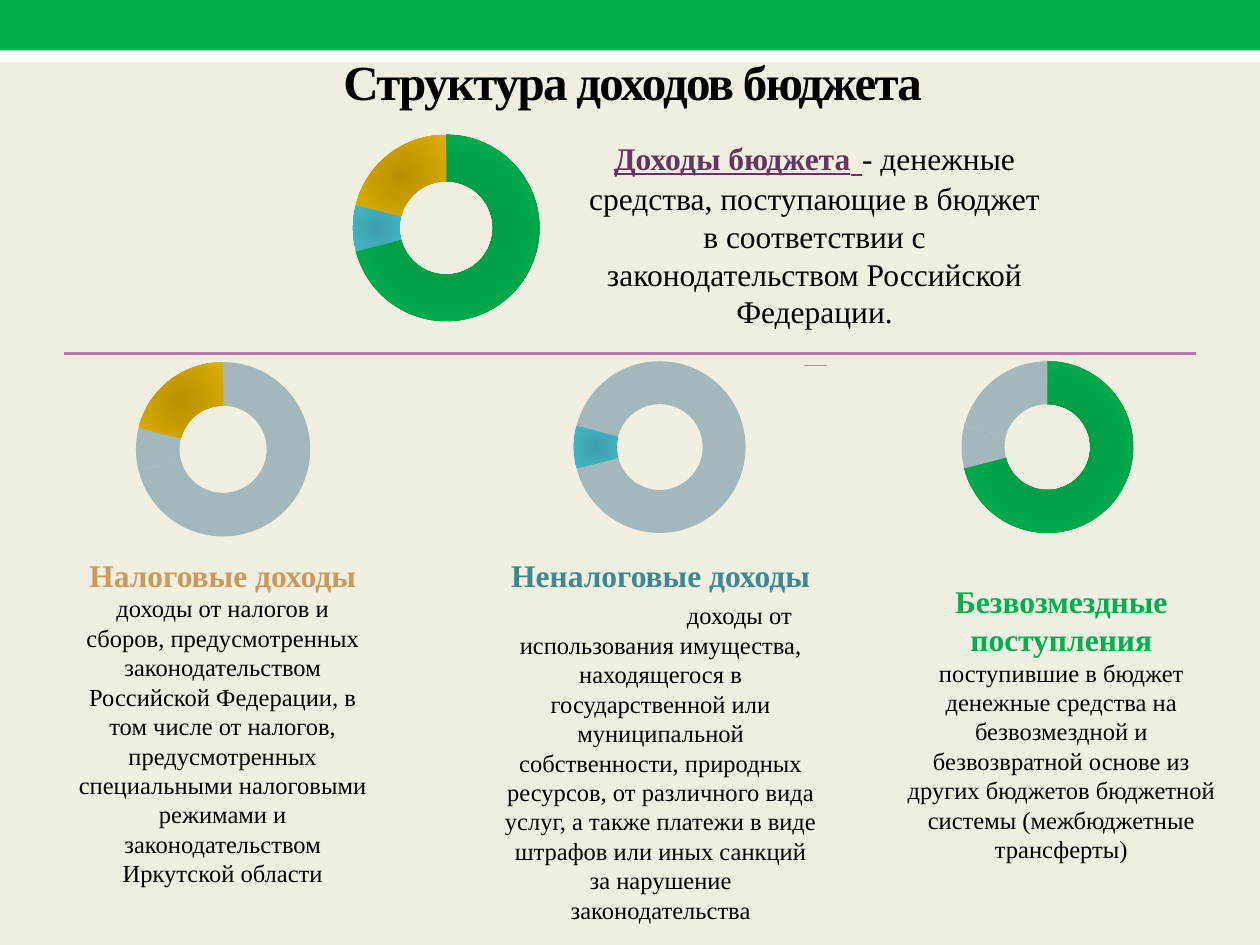
from dataclasses import dataclass
from typing import Optional

import pptx
import pptx.chart.data
import pptx.dml.color
import pptx.enum.chart
import pptx.enum.shapes
import pptx.enum.text
import pptx.oxml
import pptx.oxml.ns
import pptx.util
from pptx.util import Pt


@dataclass(frozen=True)
class Theme:
    background: str = "EFEEE1"
    white: str = "FFFFFF"
    black: str = "000000"
    green: str = "00B050"
    muted: str = "A4B7BB"
    plum: str = "633661"
    divider: str = "B77BB4"
    tax_heading: str = "C99A5B"
    other_heading: str = "3D8991"
    dash: str = "A89C8A"
    # centre and rim of each highlighted ring segment
    segments: tuple = (("009443", "00B050"), ("3D9DA9", "43B8C8"), ("B89000", "DEAE00"))
    serif: str = "Times New Roman"
    sans: str = "Arial"
    title: float = 28
    heading: float = 18
    body: float = 14
    label: float = 10


@dataclass(frozen=True)
class Area:
    left: float
    top: float
    width: float
    height: float

    def lengths(self) -> tuple:
        return Pt(self.left), Pt(self.top), Pt(self.width), Pt(self.height)


@dataclass(frozen=True)
class Span:
    text: str
    size: float
    color: str
    bold: bool = False
    underline: bool = False
    font: str = "Times New Roman"


@dataclass(frozen=True)
class Income:
    heading: str
    description: str
    color: str
    segment: int
    ring: Area
    text: Area
    first_indent: float = 0
    gap: float = 0


THEME = Theme()
SHARES = (71, 8, 21)
INCOMES = (
    Income("Налоговые доходы",
           "доходы от налогов и сборов, предусмотренных законодательством Российской "
           "Федерации, в том числе от налогов, предусмотренных специальными налоговыми "
           "режимами и законодательством Иркутской области",
           THEME.tax_heading, 2, Area(15, 197, 225, 119.5), Area(36.5, 314, 181.5, 199)),
    Income("Неналоговые доходы",
           "доходы\u00a0от использования имущества, находящегося в государственной или "
           "муниципальной собственности, природных ресурсов, от различного вида услуг, "
           "а также платежи в виде штрафов или иных санкций за нарушение законодательства",
           THEME.other_heading, 1, Area(266.5, 196.5, 221, 118), Area(281, 314, 193, 199),
           first_indent=90, gap=4),
    Income("Безвозмездные поступления",
           "поступившие в бюджет денежные средства на безвозмездной и безвозвратной "
           "основе из других бюджетов бюджетной системы (межбюджетные трансферты)",
           THEME.green, 0, Area(493, 196.5, 211, 118), Area(508.5, 329, 196, 170)),
)


def rgb(color: str) -> pptx.dml.color.RGBColor:
    return pptx.dml.color.RGBColor.from_string(color)


def add_band(page, area: Area, color: str) -> None:
    band = page.shapes.add_shape(pptx.enum.shapes.MSO_SHAPE.RECTANGLE, *area.lengths())
    band.shadow.inherit = False
    band.fill.solid()
    band.fill.fore_color.rgb = rgb(color)
    band.line.fill.background()


def add_line(page, left: float, right: float, top: float, color: str, width: float) -> None:
    line = page.shapes.add_connector(
        pptx.enum.shapes.MSO_CONNECTOR.STRAIGHT, Pt(left), Pt(top), Pt(right), Pt(top))
    line.line.color.rgb = rgb(color)
    line.line.width = Pt(width)
    properties = line._element.spPr
    properties.append(properties.makeelement(pptx.oxml.ns.qn("a:effectLst"), {}))


def add_text(page, area: Area, paragraphs: list[list[Span]]):
    box = page.shapes.add_textbox(*area.lengths())
    frame = box.text_frame
    frame.word_wrap = True
    for index, spans in enumerate(paragraphs):
        para = frame.add_paragraph() if index else frame.paragraphs[0]
        para.alignment = pptx.enum.text.PP_ALIGN.CENTER
        for span in spans:
            run = para.add_run()
            run.text = span.text
            run.font.size = Pt(span.size)
            run.font.name = span.font
            run.font.bold = span.bold
            run.font.underline = span.underline
            run.font.color.rgb = rgb(span.color)
    return box


def fill_radially(fill, centre: str, rim: str) -> None:
    """Fill with a gradient that runs from the centre outwards."""
    fill.gradient()
    for stop, color in zip(fill.gradient_stops, (centre, rim)):
        stop.color.rgb = rgb(color)
    gradient = fill._xPr.find(pptx.oxml.ns.qn("a:gradFill"))
    gradient.remove(gradient.find(pptx.oxml.ns.qn("a:lin")))
    gradient.append(pptx.oxml.parse_xml(
        f'<a:path {pptx.oxml.ns.nsdecls("a")} path="circle">'
        '<a:fillToRect l="50000" t="50000" r="50000" b="50000"/></a:path>'))


def add_ring(page, area: Area, highlighted: Optional[int] = None) -> None:
    """Draw the income shares, with one segment or all of them in colour."""
    data = pptx.chart.data.CategoryChartData()
    data.categories = [str(number) for number, _ in enumerate(SHARES, 1)]
    data.add_series("Series 1", SHARES)
    chart = page.shapes.add_chart(
        pptx.enum.chart.XL_CHART_TYPE.DOUGHNUT, *area.lengths(), data).chart
    chart.has_legend = False
    chart.has_title = False
    chart.font.name = THEME.sans
    chart.font.size = Pt(THEME.label)
    chart.font.color.rgb = rgb(THEME.black)
    plot = chart.plots[0]
    plot.vary_by_categories = True
    for index, (centre, rim) in enumerate(THEME.segments):
        segment = plot.series[0].points[index].format
        segment.line.fill.background()
        if highlighted in (None, index):
            fill_radially(segment.fill, centre, rim)
        else:
            segment.fill.solid()
            segment.fill.fore_color.rgb = rgb(THEME.muted)


def add_income(page, income: Income) -> None:
    add_ring(page, income.ring, income.segment)
    box = add_text(page, income.text, [
        [Span(income.heading, THEME.heading, income.color, bold=True)],
        [Span(income.description, THEME.body, THEME.black)]])
    description = box.text_frame.paragraphs[1]
    description.space_before = Pt(income.gap)
    if income.first_indent:
        properties = description._p.get_or_add_pPr()
        properties.set("marL", "0")
        properties.set("indent", str(Pt(income.first_indent)))


def main() -> None:
    deck = pptx.Presentation()
    deck.slide_width, deck.slide_height = Pt(720), Pt(540)
    page = deck.slides.add_slide(deck.slide_layouts[6])
    page.background.fill.solid()
    page.background.fill.fore_color.rgb = rgb(THEME.background)

    add_band(page, Area(0, 17.5, 720, 18), THEME.white)
    add_band(page, Area(0, 0, 720, 28.8), THEME.green)
    title = add_text(page, Area(37.5, 22.5, 648, 47), [
        [Span("Структура доходов бюджета", THEME.title, THEME.black, bold=True)]])
    title.text_frame.vertical_anchor = pptx.enum.text.MSO_ANCHOR.MIDDLE
    title.text_frame.paragraphs[0].runs[0].font._element.set("spc", "-100")

    for income in INCOMES:
        add_income(page, income)

    add_text(page, Area(324, 70, 283, 145), [[
        Span("Доходы бюджета", THEME.heading, THEME.plum, bold=True, underline=True),
        Span(" ", 24, THEME.plum, bold=True, underline=True, font=THEME.sans),
        Span("- денежные средства, поступающие в бюджет в соответствии с "
             "законодательством Российской Федерации.", THEME.heading, THEME.black)]])
    add_ring(page, Area(127.5, 67, 255, 126.5))
    add_line(page, 36.5, 683.5, 202, THEME.divider, 2.08)
    add_line(page, 459.5, 472.5, 209, THEME.dash, 0.5)
    deck.save("out.pptx")


if __name__ == "__main__":
    main()
